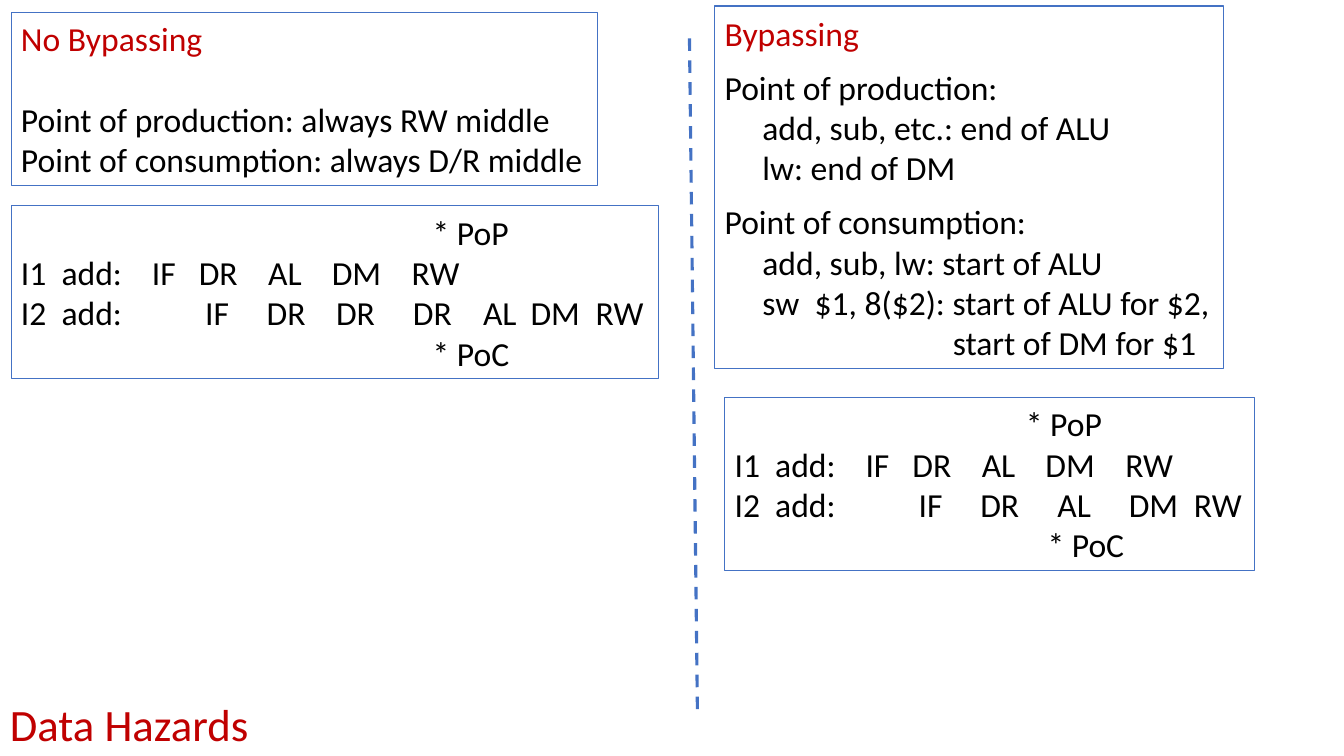
from lxml import etree
from pptx import Presentation
from pptx.dml.color import RGBColor
from pptx.enum.dml import MSO_LINE
from pptx.enum.shapes import MSO_CONNECTOR, MSO_SHAPE
from pptx.enum.text import MSO_ANCHOR, PP_ALIGN
from pptx.oxml.ns import qn
from pptx.util import Pt

RECTANGLE = MSO_SHAPE.RECTANGLE
STRAIGHT = MSO_CONNECTOR.STRAIGHT
DASH = MSO_LINE.DASH
MIDDLE = MSO_ANCHOR.MIDDLE
LEFT = PP_ALIGN.LEFT

COLORS = {"heading": "C00000", "body": "000000", "outline": "4472C4"}
FONT = "Calibri"
BODY_SIZE = 24
TITLE_SIZE = 32
INDENT = 27
ISSUE = [(0, "I1"), (29, "add:"), (93.5, "IF"), (127, "DR"),
         (176.5, "AL"), (222, "DM"), (279, "RW")]
WAITING = [(0, "I2"), (29, "add:"), (131.5, "IF"), (175.5, "DR")]

TITLE = ("Data Hazards", (0, 493.9, 187.2, 46.1))
DIVIDER = (492.5, 27.4, 498.2, 509.8)

# Each line: color role, space before, (tab position, text) pairs
RULES = [
    ((7.9, 8.6, 419, 123.8), [
        ("heading", 0, [(0, "No Bypassing")]),
        ("body", 29.3, [(0, "Point of production: always RW middle")]),
        ("body", 0, [(0, "Point of consumption: always D/R middle")]),
    ]),
    ((510.5, 4.3, 363.6, 259.2), [
        ("heading", 0, [(0, "Bypassing")]),
        ("body", 9.8, [(0, "Point of production:")]),
        ("body", 0, [(INDENT, "add, sub, etc.: end of ALU")]),
        ("body", 0, [(INDENT, "lw: end of DM")]),
        ("body", 9.8, [(0, "Point of consumption:")]),
        ("body", 0, [(INDENT, "add, sub, lw: start of ALU")]),
        ("body", 0, [(INDENT, "sw"), (64.3, "$1, 8($2): start of ALU for $2,")]),
        ("body", 0, [(163, "start of DM for $1")]),
    ]),
]
PIPELINES = [
    ((7.9, 146.9, 462.2, 123.8), [
        [(294, "* PoP")],
        ISSUE,
        WAITING + [(225, "DR"), (280, "DR"), (330, "AL"), (364, "DM"), (410.5, "RW")],
        [(294, "* PoC")],
    ]),
    ((517.7, 283.7, 378.7, 123.8), [
        [(208, "* PoP")],
        ISSUE,
        WAITING + [(230.5, "AL"), (281.5, "DM"), (328, "RW")],
        [(223.5, "* PoC")],
    ]),
]


def rgb(role):
    return RGBColor.from_string(COLORS[role])


def assign(target, values):
    for name, value in values.items():
        setattr(target, name, value)


def write_line(paragraph, role, size, space, cells):
    assign(paragraph, {"alignment": LEFT, "space_before": Pt(space)})
    stops = [position for position, _ in cells if position]
    if stops:
        tab_list = etree.SubElement(paragraph._p.get_or_add_pPr(), qn("a:tabLst"))
        for position in stops:
            etree.SubElement(tab_list, qn("a:tab"), pos=str(int(Pt(position))), algn="l")
    run = paragraph.add_run()
    run.text = "".join(("\t" if position else "") + text for position, text in cells)
    assign(run.font, {"name": FONT, "size": Pt(size)})
    run.font.color.rgb = rgb(role)


def write_lines(frame, lines, size):
    assign(frame, {"word_wrap": True, "margin_right": Pt(0), "vertical_anchor": MIDDLE})
    for index, (role, space, cells) in enumerate(lines):
        paragraph = frame.add_paragraph() if index else frame.paragraphs[0]
        write_line(paragraph, role, size, space, cells)


def add_panel(slide, place, lines):
    panel = slide.shapes.add_shape(RECTANGLE, *map(Pt, place))
    panel.shadow.inherit = False
    panel.fill.background()
    panel.line.color.rgb = rgb("outline")
    panel.line.width = Pt(0.75)
    write_lines(panel.text_frame, lines, BODY_SIZE)


def main():
    deck = Presentation()
    assign(deck, {"slide_width": Pt(960), "slide_height": Pt(540)})
    slide = deck.slides.add_slide(deck.slide_layouts[6])

    title, place = TITLE
    title_box = slide.shapes.add_textbox(*map(Pt, place))
    write_lines(title_box.text_frame, [("heading", 0, [(0, title)])], TITLE_SIZE)

    divider = slide.shapes.add_connector(STRAIGHT, *map(Pt, DIVIDER))
    divider.line.color.rgb = rgb("outline")
    assign(divider.line, {"width": Pt(2.25), "dash_style": DASH})
    etree.SubElement(divider._element.spPr, qn("a:effectLst"))

    for place, lines in RULES:
        add_panel(slide, place, lines)
    for place, rows in PIPELINES:
        add_panel(slide, place, [("body", 0, cells) for cells in rows])

    deck.save("out.pptx")


if __name__ == "__main__":
    main()
